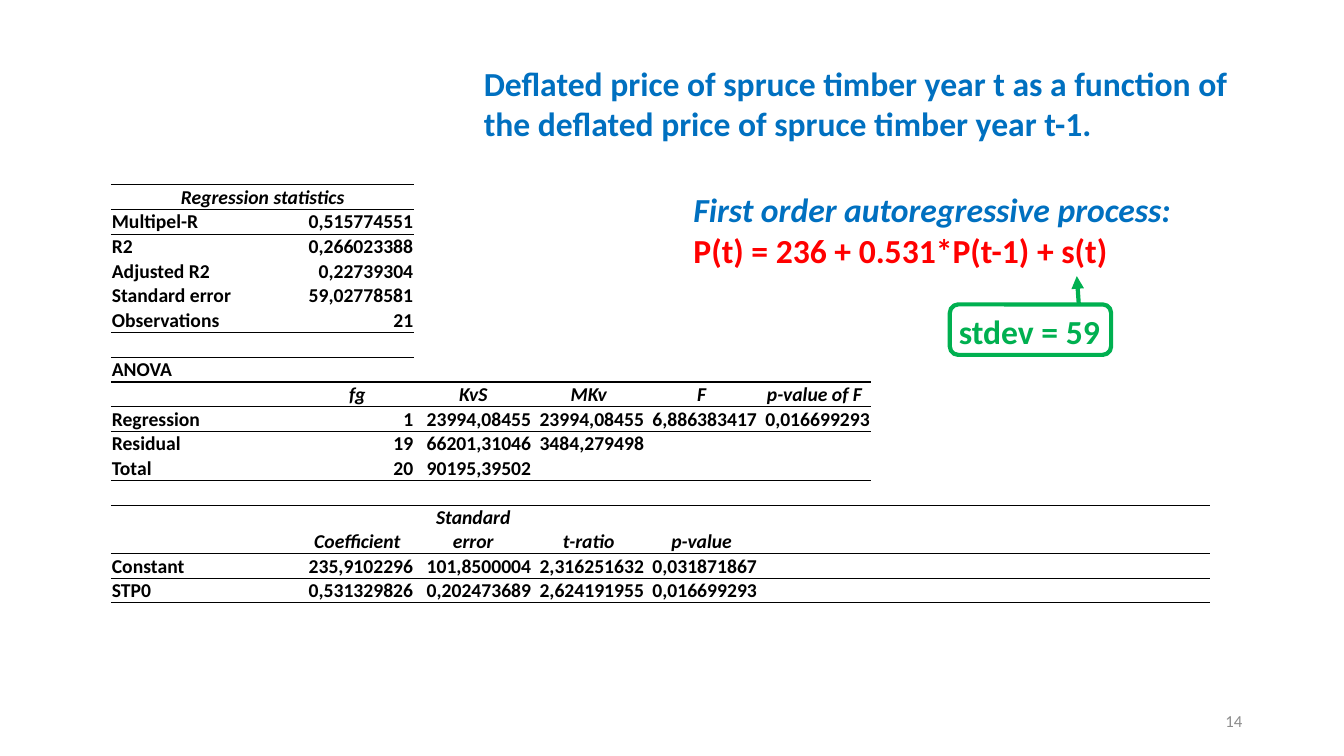
from lxml import etree
from pptx import Presentation
from pptx import util as u
from pptx.dml.color import RGBColor
from pptx.enum import shapes, text
from pptx.oxml.ns import qn

BLACK = RGBColor(0x00, 0x00, 0x00)
BLUE = RGBColor(0x00, 0x70, 0xC0)
RED = RGBColor(0xFF, 0x00, 0x00)
GREEN = RGBColor(0x00, 0xB0, 0x50)
GRAY = RGBColor(0x8C, 0x8C, 0x8C)
FONT = "Calibri"
SLIDE_WIDTH, SLIDE_HEIGHT = u.Inches(13.33), u.Inches(7.5)
NO_STYLE = "{2D5ABB26-0587-4C30-8999-92F81FD0307C}"

LEFT, CENTER, RIGHT = text.PP_ALIGN.LEFT, text.PP_ALIGN.CENTER, text.PP_ALIGN.RIGHT

COLUMN_SHARES = [14.1, 8.48, 8.78] + [8.4] * 6
ROW_SHARE = 3.27
TABLE_SIZE = 14
HEADER_ROWS = {0, 8, 13}
REGRESSION = [
    ["Regression statistics"],
    ["Multipel-R", "0,515774551"],
    ["R2", "0,266023388"],
    ["Adjusted R2", "0,22739304"],
    ["Standard error", "59,02778581"],
    ["Observations", "21"],
    [],
    ["ANOVA"],
    ["", "fg", "KvS", "MKv", "F", "p-value of F"],
    ["Regression", "1", "23994,08455", "23994,08455", "6,886383417", "0,016699293"],
    ["Residual", "19", "66201,31046", "3484,279498"],
    ["Total", "20", "90195,39502"],
    [],
    ["", "Coefficient", "Standard error", "t-ratio", "p-value"],
    ["Constant", "235,9102296", "101,8500004", "2,316251632", "0,031871867"],
    ["STP0", "0,531329826", "0,202473689", "2,624191955", "0,016699293"],
]
# Row below the rule: (columns it spans, weight in points)
RULES = {0: (2, 1), 1: (2, 0.5), 6: (2, 1), 8: (6, 1), 9: (6, 0.5),
         12: (6, 1), 13: (9, 1), 14: (9, 0.5), 16: (9, 1)}


def across(percent):
    return round(SLIDE_WIDTH * percent / 100)


def down(percent):
    return round(SLIDE_HEIGHT * percent / 100)


def area(left, top, width, height):
    """Turn percentages of the slide into a position and size."""
    return across(left), down(top), across(width), down(height)


def write(paragraph, words, size=24, color=BLACK, bold=True, italic=False,
          align=LEFT, before=0, indent=0):
    run = paragraph.add_run()
    run.text = words
    run.font.name, run.font.size = FONT, u.Pt(size)
    run.font.bold, run.font.italic = bold, italic
    run.font.color.rgb = color
    paragraph.alignment = align
    if before:
        paragraph.space_before = u.Pt(before)
    if indent:
        paragraph._p.get_or_add_pPr().set("marL", str(across(indent)))


def add_textbox(slide, place, lines, wrap=True, anchor=text.MSO_ANCHOR.TOP):
    """Add one paragraph for each (words, format) pair."""
    frame = slide.shapes.add_textbox(*place).text_frame
    frame.word_wrap = wrap
    frame.vertical_anchor = anchor
    for number, (words, style) in enumerate(lines):
        paragraph = frame.add_paragraph() if number else frame.paragraphs[0]
        write(paragraph, words, **style)


def fill_cell(cell, words, **style):
    cell.margin_left = cell.margin_right = cell.margin_top = u.Inches(0.01)
    cell.margin_bottom = 0
    cell.vertical_anchor = text.MSO_ANCHOR.BOTTOM
    paragraph = cell.text_frame.paragraphs[0]
    if words:
        write(paragraph, words, size=TABLE_SIZE, **style)
    else:
        etree.SubElement(paragraph._p, qn("a:endParaRPr"), sz=str(TABLE_SIZE * 100))


def add_border(cell, side, weight):
    border = etree.SubElement(cell._tc.get_or_add_tcPr(), qn("a:" + side),
                              w=str(u.Pt(weight)))
    fill = etree.SubElement(border, qn("a:solidFill"))
    etree.SubElement(fill, qn("a:srgbClr"), val=str(BLACK))


def add_regression_table(slide):
    place = area(8.25, 24.4, sum(COLUMN_SHARES), ROW_SHARE * len(REGRESSION))
    table = slide.shapes.add_table(len(REGRESSION), len(COLUMN_SHARES), *place).table
    table.first_row = table.horz_banding = False
    table._tbl.tblPr.find(qn("a:tableStyleId")).text = NO_STYLE
    for column, share in zip(table.columns, COLUMN_SHARES):
        column.width = across(share)
    for r, values in enumerate(REGRESSION):
        table.rows[r].height = down(ROW_SHARE)
        header = r in HEADER_ROWS
        for c in range(len(COLUMN_SHARES)):
            align = CENTER if header else RIGHT if c else LEFT
            fill_cell(table.cell(r, c), values[c] if c < len(values) else "",
                      italic=header, align=align)
    for edge, (span, weight) in RULES.items():
        for c in range(span):
            if edge < len(REGRESSION):
                add_border(table.cell(edge, c), "lnT", weight)
            if edge:
                add_border(table.cell(edge - 1, c), "lnB", weight)
    for cell in table.iter_cells():
        cell.fill.background()
    table.cell(0, 0).merge(table.cell(0, 1))


def add_frame(slide, place):
    frame = slide.shapes.add_shape(shapes.MSO_SHAPE.ROUNDED_RECTANGLE, *place)
    frame.shadow.inherit = False
    frame.fill.background()
    frame.line.color.rgb = GREEN
    frame.line.width = u.Pt(3)


def add_arrow(slide, start, end):
    arrow = slide.shapes.add_connector(
        shapes.MSO_CONNECTOR.STRAIGHT,
        across(start[0]), down(start[1]), across(end[0]), down(end[1]))
    arrow.line.color.rgb = GREEN
    arrow.line.width = u.Pt(3)
    etree.SubElement(arrow.line._get_or_add_ln(), qn("a:tailEnd"), type="triangle")
    etree.SubElement(arrow._element.spPr, qn("a:effectLst"))


def main():
    deck = Presentation()
    deck.slide_width, deck.slide_height = SLIDE_WIDTH, SLIDE_HEIGHT
    slide = deck.slides.add_slide(deck.slide_layouts[6])

    add_textbox(slide, area(70.67, 92.67, 22.5, 5.33),
                [("14", dict(size=12, color=GRAY, bold=False, align=RIGHT))],
                anchor=text.MSO_ANCHOR.MIDDLE)
    add_regression_table(slide)
    add_textbox(slide, area(35.26, 7.6, 57.84, 12.13), [
        ("Deflated price of spruce timber year t as a function of "
         "the deflated price of spruce timber year t-1.", dict(color=BLUE))])
    add_textbox(slide, area(50.86, 24.4, 37.43, 22.93), [
        ("First order autoregressive process:", dict(color=BLUE, italic=True)),
        ("P(t) = 236 + 0.531*P(t-1) + s(t)", dict(color=RED)),
        ("stdev = 59", dict(color=GREEN, before=29, indent=19.75))], wrap=False)
    add_frame(slide, area(70.67, 40.27, 12, 6.67))
    add_arrow(slide, (80.27, 40.27), (80.12, 36.53))

    deck.save("out.pptx")


if __name__ == "__main__":
    main()
